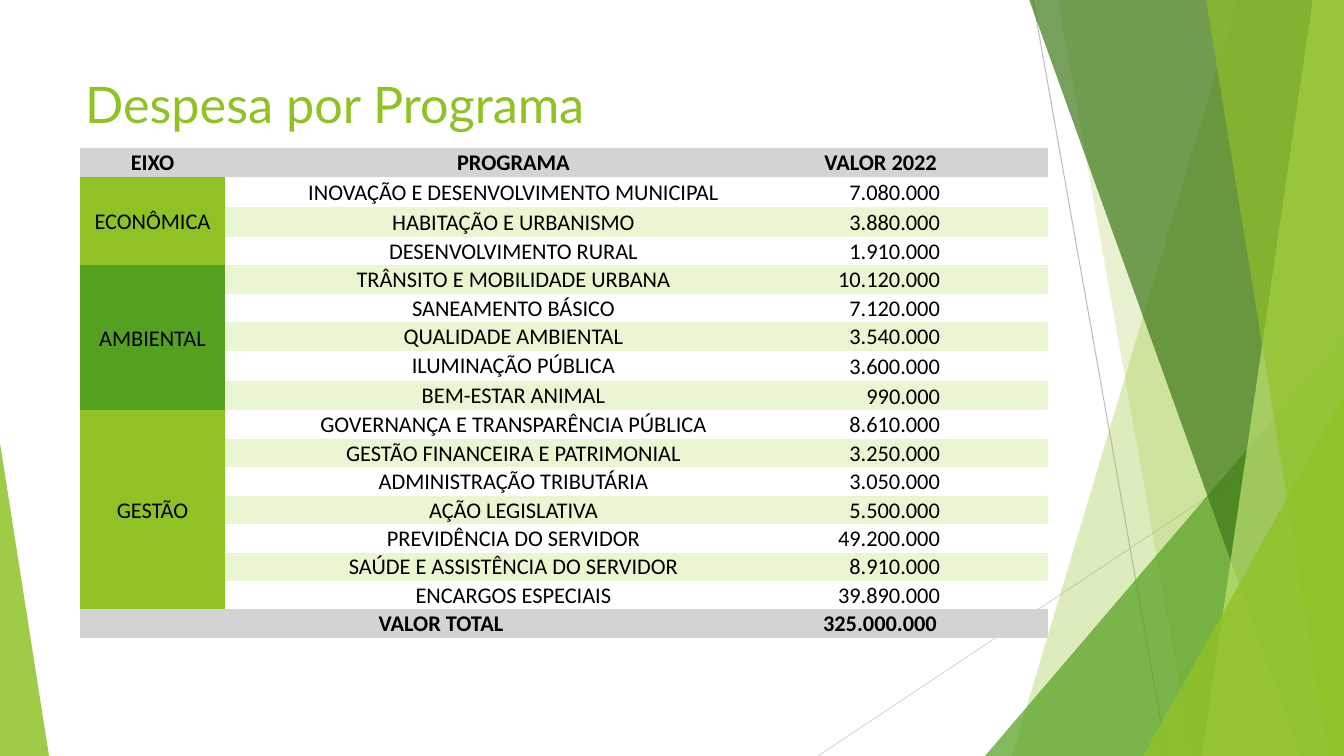
from lxml import etree
from pptx import Presentation
from pptx.dml.color import RGBColor
from pptx.enum.shapes import MSO_CONNECTOR, MSO_SHAPE
from pptx.enum.text import MSO_ANCHOR, PP_ALIGN
from pptx.oxml.ns import qn
from pptx.util import Pt

STRAIGHT = MSO_CONNECTOR.STRAIGHT
TRIANGLE = MSO_SHAPE.ISOSCELES_TRIANGLE
MIDDLE, BOTTOM, TOP = MSO_ANCHOR.MIDDLE, MSO_ANCHOR.BOTTOM, MSO_ANCHOR.TOP
CENTER, RIGHT, LEFT = PP_ALIGN.CENTER, PP_ALIGN.RIGHT, PP_ALIGN.LEFT
PX = 914400 / 100.8
WIDTH, HEIGHT = 1344, 756
NO_GRID_STYLE = "{2D5ABB26-0587-4C30-8999-92F81FD0307C}"
COLORS = {
    "lime": "90C226", "green": "54A021", "forest": "3F7819", "pale": "C0E474",
    "band": "EAF6D1", "gray": "D3D3D3", "line": "BFBFBF", "light line": "D9D9D9",
    "black": "000000",
}


def px(*lengths):
    return [round(length * PX) for length in lengths]


def paint(shape, color, opacity):
    """Fill a shape without outline or shadow; opacity is a percentage."""
    shape.shadow.inherit = False
    shape.line.fill.background()
    shape.fill.solid()
    shape.fill.fore_color.rgb = RGBColor.from_string(COLORS[color])
    srgb = shape.element.spPr.find(qn("a:solidFill")).find(qn("a:srgbClr"))
    etree.SubElement(srgb, qn("a:alpha")).set("val", str(opacity * 1000))


presentation = Presentation()
presentation.slide_width, presentation.slide_height = px(WIDTH, HEIGHT)
slide = presentation.slides.add_slide(presentation.slide_layouts[5])
shapes = slide.shapes

# Thin lines behind the facets
for ends, color in [((1033, 0, 1167, 756), "line"), ((1344, 406, 818, 756), "light line")]:
    connector = shapes.add_connector(STRAIGHT, *px(*ends))
    connector.line.width = Pt(0.75)
    connector.line.color.rgb = RGBColor.from_string(COLORS[color])
    etree.SubElement(connector.element.spPr, qn("a:effectLst"))

# Facets: a pair is the left edge at top and bottom of a band that reaches the
# right side; four numbers are the box of a triangle, followed by its apex
facets = [
    ((1238, 1012), None, "lime", 30),
    ((1058, 1192), None, "lime", 20),
    ((985, 336, 359, 420), 1, "green", 72),
    ((1029, 1301), None, "forest", 70),
    ((1313, 1202), None, "pale", 70),
    ((1206, 1329), None, "lime", 65),
    ((1143, 396, 201, 360), 1, "lime", 80),
    ((0, 443, 49, 313), 0, "lime", 85),
]
for geometry, apex, color, opacity in facets:
    if apex is None:
        top_left, bottom_left = geometry
        builder = shapes.build_freeform(top_left, -1, scale=PX)
        builder.add_line_segments([(WIDTH, -1), (WIDTH, HEIGHT), (bottom_left, HEIGHT)])
        facet = builder.convert_to_shape()
    else:
        facet = shapes.add_shape(TRIANGLE, *px(*geometry))
        facet.adjustments[0] = apex
    paint(facet, color, opacity)

# Title
title = shapes.title
title.left, title.top, title.width, title.height = px(75, 68, 948, 145)
title.text_frame.text = "Despesa por Programa"
title.text_frame.vertical_anchor = TOP
title_paragraph = title.text_frame.paragraphs[0]
title_paragraph.alignment = LEFT
title_font = title_paragraph.runs[0].font
title_font.name, title_font.size = "Lato", Pt(36)
title_font.color.rgb = RGBColor.from_string(COLORS["lime"])

# Table
axes = [
    ("ECONÔMICA", "lime", [
        ("INOVAÇÃO E DESENVOLVIMENTO MUNICIPAL", "7.080.000"),
        ("HABITAÇÃO E URBANISMO", "3.880.000"),
        ("DESENVOLVIMENTO RURAL", "1.910.000"),
    ]),
    ("AMBIENTAL", "green", [
        ("TRÂNSITO E MOBILIDADE URBANA", "10.120.000"),
        ("SANEAMENTO BÁSICO", "7.120.000"),
        ("QUALIDADE AMBIENTAL", "3.540.000"),
        ("ILUMINAÇÃO PÚBLICA", "3.600.000"),
        ("BEM-ESTAR ANIMAL", "990.000"),
    ]),
    ("GESTÃO", "lime", [
        ("GOVERNANÇA E TRANSPARÊNCIA PÚBLICA", "8.610.000"),
        ("GESTÃO FINANCEIRA E PATRIMONIAL", "3.250.000"),
        ("ADMINISTRAÇÃO TRIBUTÁRIA", "3.050.000"),
        ("AÇÃO LEGISLATIVA", "5.500.000"),
        ("PREVIDÊNCIA DO SERVIDOR", "49.200.000"),
        ("SAÚDE E ASSISTÊNCIA DO SERVIDOR", "8.910.000"),
        ("ENCARGOS ESPECIAIS", "39.890.000"),
    ]),
]
rows = [("EIXO", "PROGRAMA", "VALOR 2022")]
axis_spans = []
for axis, color, programs in axes:
    axis_spans.append((len(rows), len(programs), color))
    for index, (program, value) in enumerate(programs):
        rows.append((axis if index == 0 else "", program, value))
rows.append(("VALOR TOTAL", "", "325.000.000"))
last = len(rows) - 1

row_heights = [29] + [30 if index in (1, 2, 7, 8) else 28 for index in range(1, len(rows))]
frame = shapes.add_table(len(rows), 3, *px(80, 148, 968, sum(row_heights)))
frame.element.find(".//" + qn("a:tableStyleId")).text = NO_GRID_STYLE
frame.element.addprevious(title.element)
table = frame.table
table.first_row = table.horz_banding = False
for column, width in zip(table.columns, px(145, 577, 246)):
    column.width = width
for row, height in zip(table.rows, px(*row_heights)):
    row.height = height

for row_index, texts in enumerate(rows):
    is_bold = row_index in (0, last)
    for column_index, text in enumerate(texts):
        cell = table.cell(row_index, column_index)
        is_value = column_index == 2
        right_margin = (111 if is_bold else 108) if is_value else 1
        cell.margin_left, cell.margin_top, cell.margin_right, cell.margin_bottom = px(
            1, 1, right_margin, 0)
        cell.vertical_anchor = BOTTOM if is_value else MIDDLE
        if is_bold or row_index % 2 == 0:
            cell.fill.solid()
            cell.fill.fore_color.rgb = RGBColor.from_string(COLORS["gray" if is_bold else "band"])
        else:
            cell.fill.background()
        paragraph = cell.text_frame.paragraphs[0]
        paragraph.text = text
        paragraph.alignment = RIGHT if is_value else CENTER
        paragraph.font.size = Pt(16)
        for run in paragraph.runs:
            run.font.name, run.font.size, run.font.bold = "Calibri", Pt(16), is_bold
            run.font.color.rgb = RGBColor.from_string(COLORS["black"])

for first, count, color in axis_spans:
    axis_cell = table.cell(first, 0)
    axis_cell.merge(table.cell(first + count - 1, 0))
    axis_cell.fill.solid()
    axis_cell.fill.fore_color.rgb = RGBColor.from_string(COLORS[color])
table.cell(last, 0).merge(table.cell(last, 1))

presentation.save("out.pptx")
